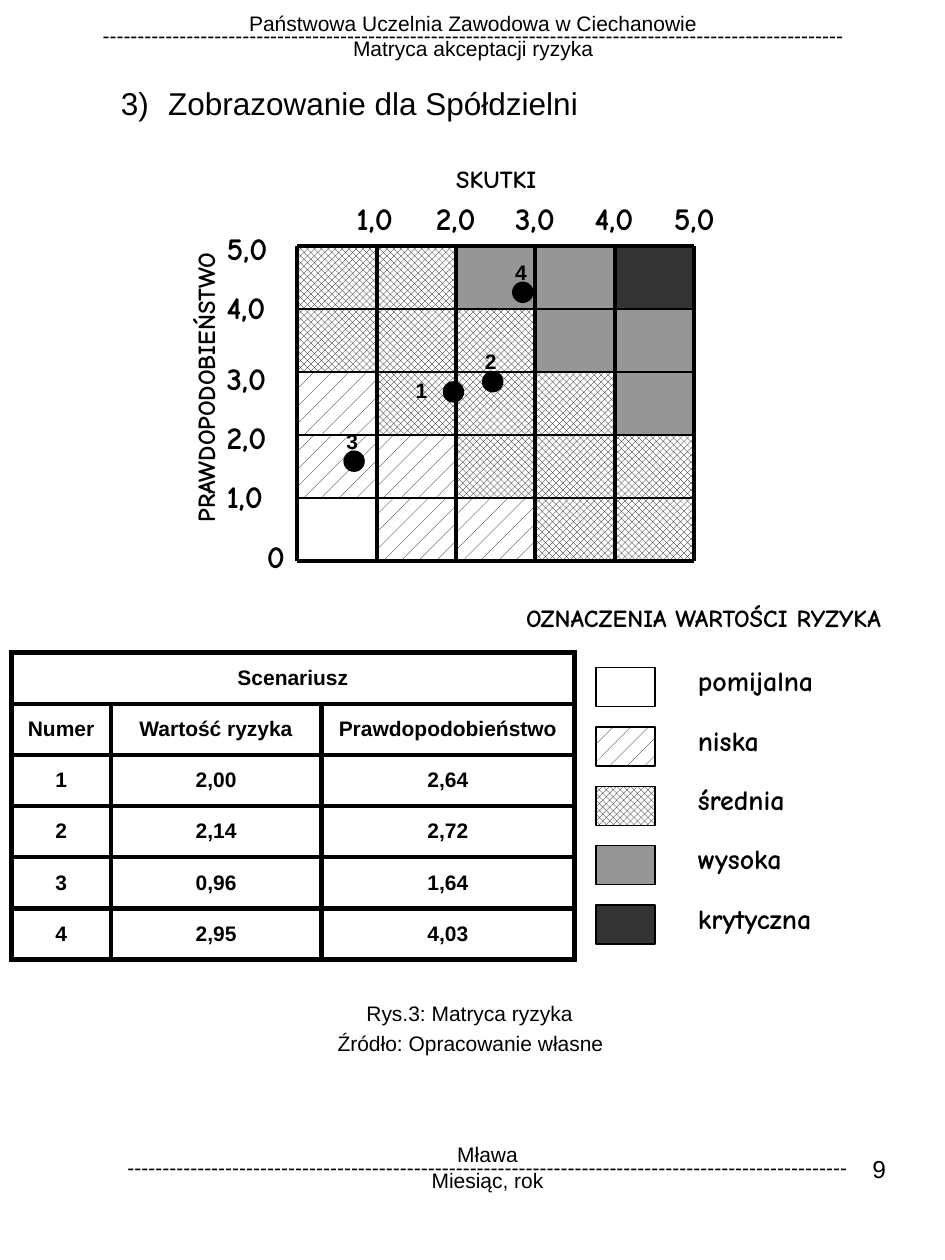
from dataclasses import dataclass
from typing import Any, Optional, Union

from lxml import etree
from pptx import Presentation
from pptx.dml.color import RGBColor
from pptx.dml.fill import FillFormat
from pptx.enum.dml import MSO_PATTERN
from pptx.enum.shapes import MSO_CONNECTOR, MSO_SHAPE
from pptx.enum.text import MSO_ANCHOR, MSO_AUTO_SIZE, PP_ALIGN
from pptx.oxml.ns import qn
from pptx.shapes.autoshape import Shape
from pptx.shapes.shapetree import GroupShapes, SlideShapes
from pptx.table import _Cell
from pptx.text.text import TextFrame
from pptx.util import Pt

LEFT, CENTER, RIGHT, JUSTIFY = PP_ALIGN.LEFT, PP_ALIGN.CENTER, PP_ALIGN.RIGHT, PP_ALIGN.JUSTIFY
TOP, MIDDLE = MSO_ANCHOR.TOP, MSO_ANCHOR.MIDDLE
GROW, FIXED = MSO_AUTO_SIZE.SHAPE_TO_FIT_TEXT, MSO_AUTO_SIZE.NONE
RECTANGLE, OVAL, STRAIGHT = MSO_SHAPE.RECTANGLE, MSO_SHAPE.OVAL, MSO_CONNECTOR.STRAIGHT
SPARSE, DIAMONDS = MSO_PATTERN.PERCENT_5, MSO_PATTERN.OUTLINED_DIAMOND

Shapes = Union[SlideShapes, GroupShapes]


@dataclass(frozen=True)
class TextStyle:
    name: str
    size: float
    bold: bool = False


@dataclass(frozen=True)
class Theme:
    ink: RGBColor = RGBColor(0, 0, 0)
    paper: RGBColor = RGBColor(255, 255, 255)
    high: RGBColor = RGBColor(0x96, 0x96, 0x96)
    critical: RGBColor = RGBColor(0x33, 0x33, 0x33)
    heading: TextStyle = TextStyle("Arial", 18)
    page: TextStyle = TextStyle("Arial", 14)
    body: TextStyle = TextStyle("Arial", 12)
    strong: TextStyle = TextStyle("Arial", 12, True)
    scale: TextStyle = TextStyle("Comic Neue", 18, True)
    legend: TextStyle = TextStyle("Comic Neue", 16, True)
    axis: TextStyle = TextStyle("Comic Neue", 14, True)
    thick: float = 2.25
    thin: float = 1
    outline: float = 0.75
    table_border: float = 3


@dataclass(frozen=True)
class Box:
    left: float
    top: float
    width: float
    height: float

    def lengths(self) -> tuple:
        return Pt(self.left), Pt(self.top), Pt(self.width), Pt(self.height)


@dataclass(frozen=True)
class Risk:
    label: str
    label_width: float
    fill: Any


@dataclass(frozen=True)
class Scenario:
    number: str
    risk: str
    probability: str
    left: float
    top: float
    label_dx: float = -5.8
    label_dy: float = -16.6


THEME = Theme()
RISKS = {
    "N": Risk("pomijalna", 85.7, THEME.paper),
    "L": Risk("niska", 53.3, SPARSE),
    "M": Risk("średnia", 70.6, DIAMONDS),
    "H": Risk("wysoka", 68.4, THEME.high),
    "C": Risk("krytyczna", 90.7, THEME.critical),
}
MATRIX = ("MMHHC", "MMMHH", "LMMMH", "LLMMM", "NLLMM")
MATRIX_BOX = Box(169.9, 140.4, 226.8, 180)
STEP_X, STEP_Y = MATRIX_BOX.width / 5, MATRIX_BOX.height / 5
SCALE = ("1,0", "2,0", "3,0", "4,0", "5,0")
PROBABILITY_TOPS = (269.3, 235.4, 201.6, 161.3, 127.4)
SCENARIOS = (
    Scenario("1", "2,00", "2,64", 253.4, 218.2, -23, -5.8),
    Scenario("2", "2,14", "2,72", 275.8, 212.4),
    Scenario("3", "0,96", "1,64", 196.6, 257.8),
    Scenario("4", "2,95", "4,03", 293, 161.3),
)


def apply(target: Any, formats: dict) -> None:
    for attribute, value in formats.items():
        setattr(target, attribute, value)


def write(frame: TextFrame, text: str, style: TextStyle, align: PP_ALIGN = LEFT,
          spacing: Optional[float] = None) -> None:
    frame.text = text
    for paragraph in frame.paragraphs:
        apply(paragraph, {"alignment": align, "line_spacing": spacing})
        for run in paragraph.runs:
            apply(run.font, {"name": style.name, "size": Pt(style.size), "bold": style.bold})
            run.font.color.rgb = THEME.ink


def add_label(shapes: Shapes, box: Box, text: str, style: TextStyle, align: PP_ALIGN = LEFT,
              spacing: Optional[float] = None) -> Shape:
    label = shapes.add_textbox(*box.lengths())
    write(label.text_frame, text, style, align, spacing)
    apply(label.text_frame, {"word_wrap": False, "auto_size": GROW})
    return label


def paint(fill: FillFormat, value: Any) -> None:
    if isinstance(value, RGBColor):
        fill.solid()
        fill.fore_color.rgb = value
    else:
        fill.patterned()
        fill.pattern = value
        fill.fore_color.rgb, fill.back_color.rgb = THEME.ink, THEME.paper


def add_patch(shapes: Shapes, kind: MSO_SHAPE, box: Box, fill: Any, outline: float = 0) -> None:
    patch = shapes.add_shape(kind, *box.lengths())
    patch.shadow.inherit = False
    paint(patch.fill, fill)
    if outline:
        patch.line.color.rgb = THEME.ink
        patch.line.width = Pt(outline)
    else:
        patch.line.fill.background()


def add_rule(shapes: Shapes, x1: float, y1: float, x2: float, y2: float, width: float) -> None:
    rule = shapes.add_connector(STRAIGHT, Pt(x1), Pt(y1), Pt(x2), Pt(y2))
    rule.line.color.rgb = THEME.ink
    rule.line.width = Pt(width)
    etree.SubElement(rule._element.spPr, qn("a:effectLst"))


def add_heading(title: Shape) -> None:
    left, top, width, height = Box(61.9, 44.6, 409.7, 28.8).lengths()
    apply(title, {"left": left, "top": top, "width": width, "height": height})
    write(title.text_frame, "Zobrazowanie dla Spółdzielni", THEME.heading, JUSTIFY)
    apply(title.text_frame, {"word_wrap": True, "auto_size": FIXED, "vertical_anchor": TOP})
    properties = title.text_frame.paragraphs[0]._p.get_or_add_pPr()
    properties.set("marL", str(Pt(27)))
    properties.set("indent", str(-Pt(27)))
    etree.SubElement(properties, qn("a:buFont"), typeface=THEME.heading.name)
    etree.SubElement(properties, qn("a:buAutoNum"), type="arabicParenR", startAt="3")


def add_matrix(shapes: Shapes) -> None:
    left, top = MATRIX_BOX.left, MATRIX_BOX.top
    right, bottom = left + MATRIX_BOX.width, top + MATRIX_BOX.height
    for row, levels in enumerate(MATRIX):
        for column, level in enumerate(levels):
            cell = Box(left + column * STEP_X, top + row * STEP_Y, STEP_X, STEP_Y)
            add_patch(shapes, RECTANGLE, cell, RISKS[level].fill)
    for index in range(6):
        x, y = left + index * STEP_X, top + index * STEP_Y
        add_rule(shapes, left, y, right, y, THEME.thick if index in (0, 5) else THEME.thin)
        add_rule(shapes, x, top, x, bottom, THEME.thick)
    for index, (mark, probability_top) in enumerate(zip(SCALE, PROBABILITY_TOPS)):
        add_label(shapes, Box(196.6 + index * STEP_X, 110.2, 43.9, 28.8), mark, THEME.scale)
        add_label(shapes, Box(122.4, probability_top, 43.9, 28.8), mark, THEME.scale)
    add_label(shapes, Box(145.4, 303.1, 25.2, 28.8), "0", THEME.scale)
    add_label(shapes, Box(249.1, 90, 69.1, 23.8), "SKUTKI", THEME.axis, CENTER)
    probability = add_label(shapes, Box(18, 209.5, 198.7, 23.8), "PRAWDOPODOBIEŃSTWO",
                            THEME.axis, CENTER)
    probability.rotation = 270


def add_scenario(shapes: Shapes, scenario: Scenario) -> None:
    marker = shapes.add_group_shape().shapes
    add_patch(marker, OVAL, Box(scenario.left, scenario.top, 11.5, 11.5), THEME.ink, THEME.outline)
    label_box = Box(scenario.left + scenario.label_dx, scenario.top + scenario.label_dy, 20.9, 21.6)
    add_label(marker, label_box, scenario.number, THEME.strong)


def add_legend(shapes: Shapes) -> None:
    add_label(shapes, Box(270, 341.3, 264.2, 24.5), "OZNACZENIA WARTOŚCI RYZYKA", THEME.axis, CENTER)
    for index, risk in enumerate(RISKS.values()):
        offset = index * 33.9
        add_patch(shapes, RECTANGLE, Box(340.6, 381.6 + offset, 33.8, 22.3), risk.fill, THEME.outline)
        add_label(shapes, Box(391.7, 375.8 + offset, risk.label_width, 26.6), risk.label, THEME.legend)


def format_cell(cell: _Cell, text: str) -> None:
    write(cell.text_frame, text, THEME.strong, CENTER)
    cell.vertical_anchor = MIDDLE
    properties = cell._tc.get_or_add_tcPr()
    for side in ("lnL", "lnR", "lnT", "lnB"):
        border = etree.SubElement(properties, qn(f"a:{side}"), w=str(Pt(THEME.table_border)))
        solid = etree.SubElement(border, qn("a:solidFill"))
        etree.SubElement(solid, qn("a:srgbClr"), val=str(THEME.ink))
    cell.fill.background()


def add_scenario_table(shapes: Shapes) -> None:
    rows = [("Scenariusz", "", ""), ("Numer", "Wartość ryzyka", "Prawdopodobieństwo")]
    rows += [(scenario.number, scenario.risk, scenario.probability) for scenario in SCENARIOS]
    table = shapes.add_table(len(rows), 3, *Box(6.5, 373, 321.8, 175.2).lengths()).table
    apply(table, {"first_row": False, "horz_banding": False})
    for column, width in zip(table.columns, (56.9, 120.2, 144.7)):
        column.width = Pt(width)
    for row, texts in enumerate(rows):
        for column, text in enumerate(texts):
            format_cell(table.cell(row, column), text)
    table.cell(0, 0).merge(table.cell(0, 2))


def main() -> None:
    deck = Presentation()
    apply(deck, {"slide_width": Pt(540), "slide_height": Pt(720)})
    slide = deck.slides.add_slide(deck.slide_layouts[5])
    shapes = slide.shapes
    add_heading(shapes.title)
    header = f"Państwowa Uczelnia Zawodowa w Ciechanowie\n{'-' * 106}\nMatryca akceptacji ryzyka"
    add_label(shapes, Box(49, 8.6, 442.8, 30.2), header, THEME.body, CENTER, 0.5)
    footer = f"Mława\n{'-' * 103}\nMiesiąc, rok"
    add_label(shapes, Box(65.5, 655.2, 426.2, 28.8), footer, THEME.body, CENTER, 0.5)
    add_label(shapes, Box(387.4, 655.9, 126, 49.7), "9", THEME.page, RIGHT).text_frame.auto_size = FIXED
    add_matrix(shapes)
    for scenario in SCENARIOS:
        add_scenario(shapes, scenario)
    add_legend(shapes)
    add_scenario_table(shapes)
    add_label(shapes, Box(202.3, 568.1, 133.9, 21.6), "Rys.3: Matryca ryzyka", THEME.body)
    add_label(shapes, Box(185.8, 585.4, 167.8, 21.6), "Źródło: Opracowanie własne", THEME.body)
    deck.save("out.pptx")


if __name__ == "__main__":
    main()
